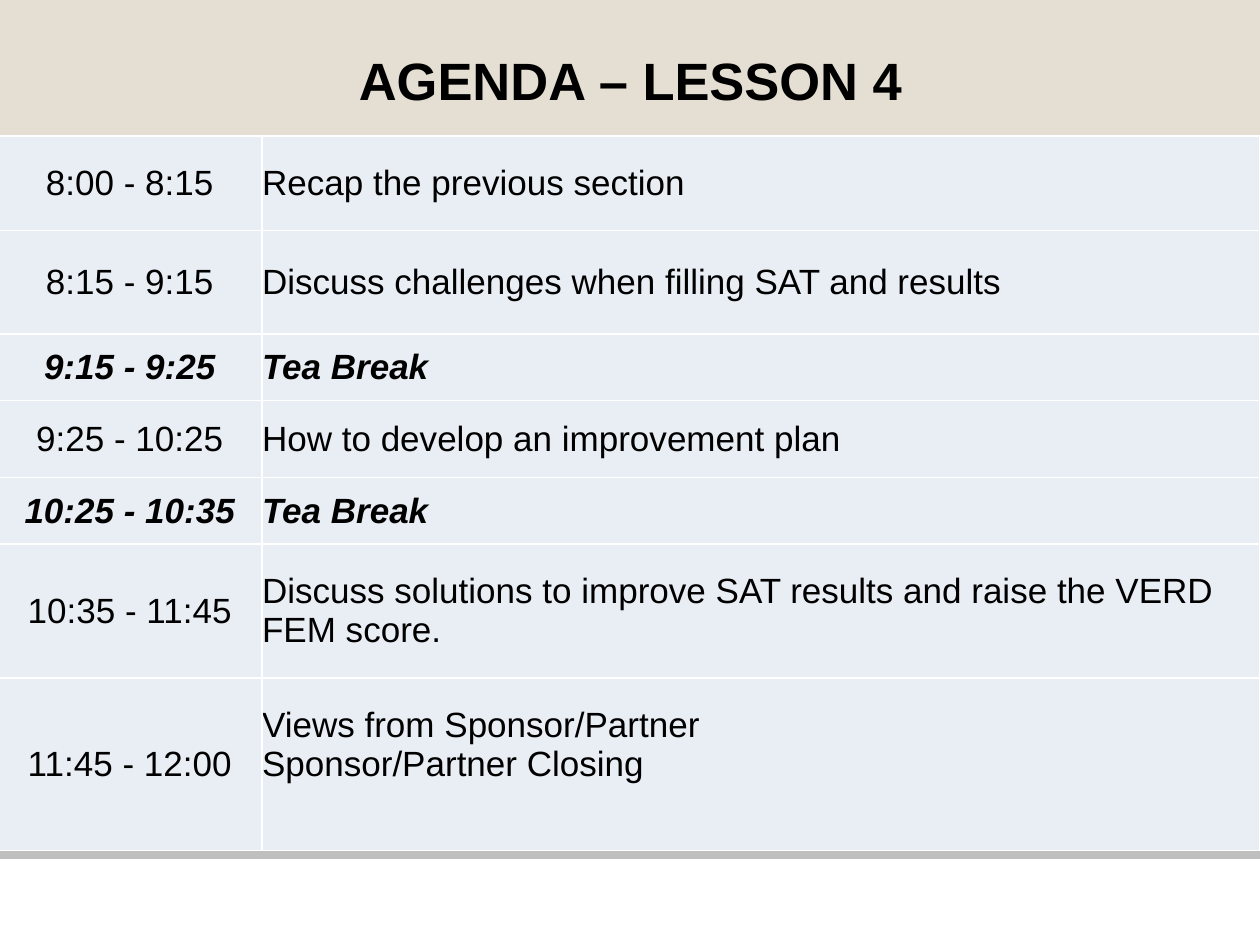
from lxml import etree
from pptx import Presentation
from pptx.dml.color import RGBColor
from pptx.enum.shapes import MSO_SHAPE
from pptx.enum.text import MSO_ANCHOR, PP_ALIGN
from pptx.oxml.ns import qn
from pptx.util import Inches, Pt

LEFT, CENTER = PP_ALIGN.LEFT, PP_ALIGN.CENTER
MIDDLE = MSO_ANCHOR.MIDDLE
RECTANGLE = MSO_SHAPE.RECTANGLE

TITLE = "AGENDA – LESSON 4"
# time, activity, row height in inches, is a break
AGENDA = [
    ("8:00 - 8:15", "Recap the previous section", 0.75, False),
    ("8:15 - 9:15", "Discuss challenges when filling SAT and results", 0.82, False),
    ("9:15 - 9:25", "Tea Break", 0.53, True),
    ("9:25 - 10:25", "How to develop an improvement plan", 0.61, False),
    ("10:25 - 10:35", "Tea Break", 0.53, True),
    ("10:35 - 11:45", "Discuss solutions to improve SAT results and raise the VERD FEM score.",
     1.06, False),
    ("11:45 - 12:00", "Views from Sponsor/Partner\vSponsor/Partner Closing", 1.37, False),
]
COLUMN_WIDTHS = (2.1, 7.92)
SLIDE_WIDTH, SLIDE_HEIGHT = 10, 7.5
HEADER_HEIGHT = 1.08
TABLE_LEFT = -0.02
CLOSING_BOTTOM_MARGIN = 0.31


def color(value):
    return RGBColor.from_string(value)


def write(frame, text, size=20, bold=False, italic=False, align=LEFT, spacing=None):
    frame.word_wrap = True
    paragraph = frame.paragraphs[0]
    paragraph.text = text
    paragraph.alignment = align
    if spacing:
        paragraph.line_spacing = Pt(spacing)
    for run in paragraph.runs:
        font = run.font
        font.name, font.size = "Arial", Pt(size)
        font.bold, font.italic = bold, italic
        font.color.rgb = color("000000")


def add_bar(slide, top, height, fill, line_width=0):
    shape = slide.shapes.add_shape(
        RECTANGLE, 0, Inches(top), Inches(SLIDE_WIDTH), Inches(height))
    shape.shadow.inherit = False
    shape.fill.solid()
    shape.fill.fore_color.rgb = color(fill)
    if line_width:
        shape.line.color.rgb = color(fill)
        shape.line.width = Pt(line_width)
    else:
        shape.line.fill.background()


def set_borders(cell, value, width):
    properties = cell._tc.get_or_add_tcPr()
    for index, side in enumerate(("a:lnL", "a:lnR", "a:lnT", "a:lnB")):
        line = etree.Element(qn(side), w=str(Pt(width)))
        fill = etree.SubElement(line, qn("a:solidFill"))
        etree.SubElement(fill, qn("a:srgbClr"), val=value)
        properties.insert(index, line)


presentation = Presentation()
presentation.slide_width = Inches(SLIDE_WIDTH)
presentation.slide_height = Inches(SLIDE_HEIGHT)
slide = presentation.slides.add_slide(presentation.slide_layouts[6])

# Footer rule and header band
table_height = sum(row[2] for row in AGENDA)
add_bar(slide, HEADER_HEIGHT + table_height, 0.05, "BFBFBF", line_width=2)
add_bar(slide, 0, HEADER_HEIGHT, "E4DFD2")

# Title
title = slide.shapes.add_textbox(Inches(0.38), Inches(0.43), Inches(9.25), Inches(0.46))
frame = title.text_frame
frame.margin_left = frame.margin_right = frame.margin_top = frame.margin_bottom = 0
write(frame, TITLE, size=30, bold=True, align=CENTER, spacing=32.7)

# Agenda table
table = slide.shapes.add_table(
    len(AGENDA), len(COLUMN_WIDTHS), Inches(TABLE_LEFT), Inches(HEADER_HEIGHT),
    Inches(sum(COLUMN_WIDTHS)), Inches(table_height)).table
table.first_row = table.horz_banding = False
for column, width in zip(table.columns, COLUMN_WIDTHS):
    column.width = Inches(width)
for row, (time, activity, height, is_break) in zip(table.rows, AGENDA):
    row.height = Inches(height)
    for cell, text, align in zip(row.cells, (time, activity), (CENTER, LEFT)):
        cell.margin_left = cell.margin_right = cell.margin_top = cell.margin_bottom = 0
        cell.vertical_anchor = MIDDLE
        cell.fill.solid()
        cell.fill.fore_color.rgb = color("E9EDF4")
        set_borders(cell, "FFFFFF", 1)
        write(cell.text_frame, text, bold=is_break, italic=is_break, align=align)

# The closing lines sit above the middle of their row
table.cell(len(AGENDA) - 1, 1).margin_bottom = Inches(CLOSING_BOTTOM_MARGIN)

presentation.save("out.pptx")
